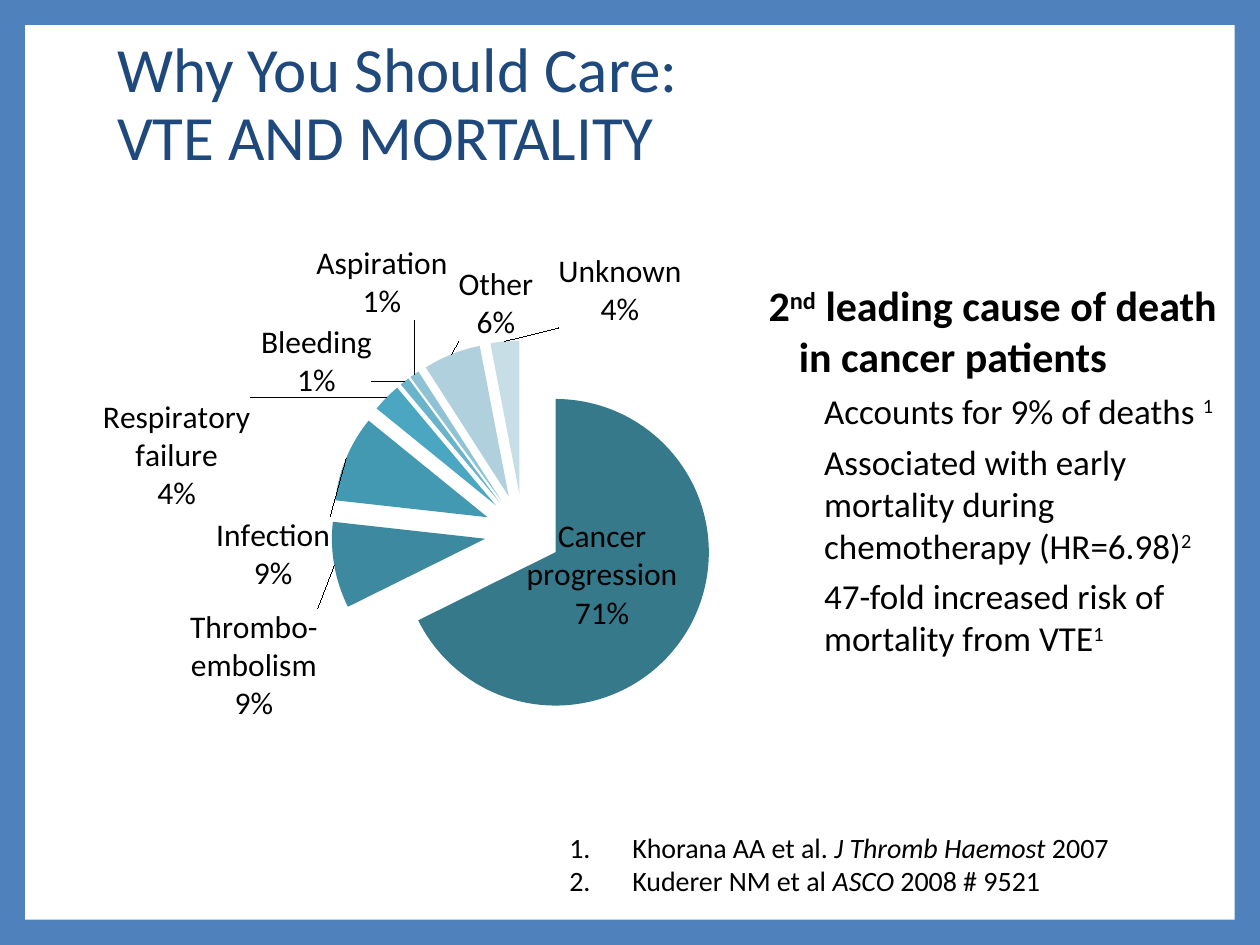
from lxml.etree import SubElement
from pptx import Presentation
from pptx.chart.data import CategoryChartData
from pptx.dml.color import RGBColor
from pptx.enum.chart import XL_CHART_TYPE as ChartType, XL_LABEL_POSITION as LabelPosition
from pptx.enum.shapes import MSO_SHAPE as Shape
from pptx.enum.text import MSO_ANCHOR as Anchor, MSO_AUTO_SIZE as AutoSize, PP_ALIGN as Align
from pptx.oxml.ns import qn
from pptx.util import Inches, Pt

# Content
FONT = "Calibri"
COLORS = {"border": "4F81BD", "page": "FFFFFF", "title": "1F497D", "text": "000000"}
TITLE = ["Why You Should Care:", "VTE AND MORTALITY"]
# category, value, slice colour, label text (None = automatic), label shift
CAUSES = [
    ("Cancer progression", 67, "35798B", "Cancer progression\n71%", (-0.02, -0.03)),
    ("Thromboembolism", 9, "3D8AA0", "Thrombo-embolism\n9%", (-0.01, 0.07)),
    ("Infection", 9, "4499B2", None, (-0.01, 0.23)),
    ("Respiratory failure", 3, "4BA7C1", "Respiratory failure\n4%", (-0.14, 0.2)),
    ("Bleeding", 1, "6AB4CB", "Bleeding\n1%", (-0.03, 0.04)),
    ("Aspiration", 1, "8FC2D4", None, (0.04, -0.08)),
    ("Other", 6, "AFD0DC", None, (0.09, -0.01)),
    ("Unknown", 3, "C8DEE6", "Unknown\n4%", (0.19, -0.01)),
]
# level, runs of (text, style)
POINTS = [
    (0, [("2", ""), ("nd", "super"), (" leading cause of death in cancer patients", "")]),
    (1, [("Accounts for 9% of deaths ", ""), ("1", "super")]),
    (1, [("Associated with early mortality during chemotherapy (HR=6.98)", ""), ("2", "super")]),
    (1, [("47-fold increased risk of mortality from VTE", ""), ("1", "super")]),
]
REFERENCES = [
    [("Khorana AA et al. ", ""), ("J Thromb Haemost", "italic"), (" 2007", "")],
    [("Kuderer NM et al ", ""), ("ASCO ", "italic"), ("2008 # 9521", "")],
]


def color(name):
    return RGBColor.from_string(COLORS.get(name, name))


def style_font(font, size, name="text", bold=False):
    font.name, font.size, font.bold = FONT, Pt(size), bold
    font.color.rgb = color(name)


def add_runs(para, runs, size, bold=False):
    for text, style in runs:
        span = para.add_run()
        span.text = text
        style_font(span.font, size, bold=bold)
        if style == "italic":
            span.font.italic = True
        if style == "super":
            span.font._element.set("baseline", "30000")


def set_indent(para, left, first, bullet, **attributes):
    properties = para._p.get_or_add_pPr()
    properties.set("marL", str(Inches(left)))
    properties.set("indent", str(Inches(first)))
    SubElement(properties, qn(bullet), **attributes)


def place(shape, left, top, width, height):
    shape.left, shape.top = Inches(left), Inches(top)
    shape.width, shape.height = Inches(width), Inches(height)


def make_layout(**values):
    """Return settings for a manual chart layout, in chart fractions."""
    return [(f"c:{key}", str(value)) for key, value in values.items()]


def add_layout(parent, index, settings):
    for old in parent.findall(qn("c:layout")):
        parent.remove(old)
    layout = SubElement(parent, qn("c:layout"))
    manual = SubElement(layout, qn("c:manualLayout"))
    for tag, value in settings:
        SubElement(manual, qn(tag), val=value)
    parent.insert(index, layout)


deck = Presentation()
deck.slide_width, deck.slide_height = Inches(10), Inches(7.5)
page = deck.slides.add_slide(deck.slide_layouts[1])

# Blue border around a white page
page.background.fill.solid()
page.background.fill.fore_color.rgb = color("border")
panel = page.shapes.add_shape(Shape.RECTANGLE, Inches(0.2), Inches(0.2), Inches(9.6), Inches(7.1))
panel.shadow.inherit = False
panel.fill.solid()
panel.fill.fore_color.rgb = color("page")
panel.line.fill.background()
page.shapes._spTree.insert(2, panel._element)

# Title
title = page.shapes.title
place(title, 0.83, 0.25, 7.97, 1.64)
title.text_frame.vertical_anchor = Anchor.TOP
title.text_frame.auto_size = AutoSize.NONE
para = title.text_frame.paragraphs[0]
para.alignment, para.line_spacing = Align.LEFT, 0.9
for number, line in enumerate(TITLE):
    if number:
        para.add_line_break()
    span = para.add_run()
    span.text = line
    style_font(span.font, 36, "title")

# Pie chart of causes of death
data = CategoryChartData()
data.categories = [cause[0] for cause in CAUSES]
data.add_series("Series 1", [cause[1] for cause in CAUSES])
chart = page.shapes.add_chart(
    ChartType.PIE, Inches(0.33), Inches(1.92), Inches(7.42), Inches(4.75), data).chart
chart.has_legend = chart.has_title = False
style_font(chart.font, 18)
add_layout(chart._chartSpace.chart.plotArea, 0, make_layout(
    layoutTarget="inner", xMode="edge", yMode="edge", x=0.31, y=0.16, w=0.41, h=0.65))
plot = chart.plots[0]
plot.vary_by_categories = True
series = plot.series[0]
explosion = SubElement(series._element, qn("c:explosion"), val="25")
series._element.find(qn("c:cat")).addprevious(explosion)

labels = series.data_labels
labels.show_percentage = labels.show_category_name = True
labels.show_value = False
labels.number_format, labels.number_format_is_linked = "0%", False
style_font(labels.font, 18)

for index, (_, _, fill, text, (x, y)) in enumerate(CAUSES):
    point = series.points[index]
    point.format.fill.solid()
    point.format.fill.fore_color.rgb = color(fill)
    label = point.data_label
    label.position = LabelPosition.OUTSIDE_END if index else LabelPosition.CENTER
    if text:
        label.text_frame.text = text
        for para in label.text_frame.paragraphs:
            style_font(para.runs[0].font, 18)
    else:
        style_font(label.font, 18)
    element = label._dLbl
    for tag, shown in (("showVal", "0"), ("showCatName", "1"), ("showPercent", "1")):
        element.find(qn(f"c:{tag}")).set("val", shown)
    separator = SubElement(element, qn("c:separator"))
    separator.text = "\n"
    add_layout(element, 1, make_layout(x=x, y=y))

# Key points
body = page.placeholders[1]
place(body, 6, 2.17, 4, 3.18)
frame = body.text_frame
frame.auto_size = AutoSize.NONE
for number, (level, runs) in enumerate(POINTS):
    para = frame.add_paragraph() if number else frame.paragraphs[0]
    para.level = level
    size = 20 if level else 24
    para.space_before = Pt(size / 4)
    set_indent(para, 0.44 if level else 0.24, 0 if level else -0.24, "a:buNone")
    add_runs(para, runs, size, bold=not level)

# References
box = page.shapes.add_textbox(Inches(4.42), Inches(6.54), Inches(5.42), Inches(0.64))
frame = box.text_frame
frame.word_wrap = True
for number, runs in enumerate(REFERENCES):
    para = frame.add_paragraph() if number else frame.paragraphs[0]
    set_indent(para, 0.5, -0.5, "a:buAutoNum", type="arabicPeriod")
    add_runs(para, runs, 16)

deck.save("out.pptx")
